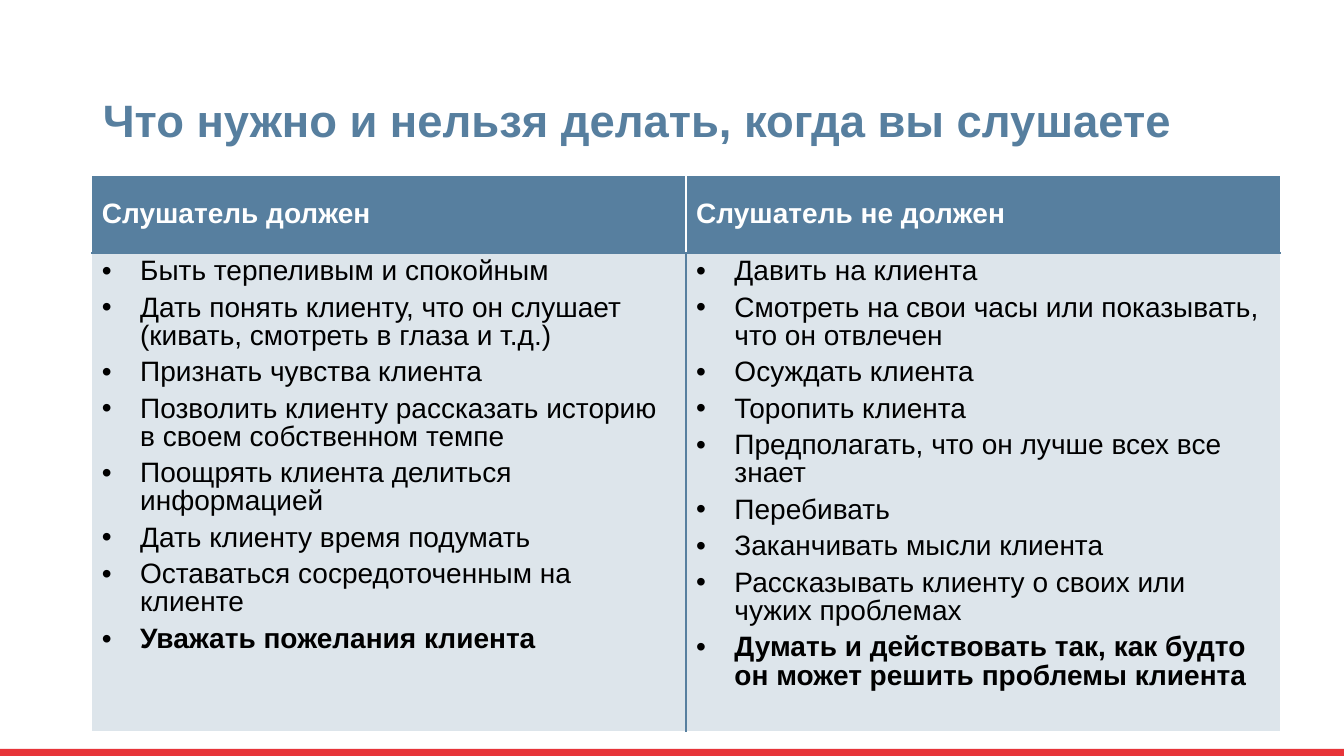
import pptx
import pptx.dml.color
import pptx.enum.shapes
import pptx.enum.text
import pptx.oxml
import pptx.oxml.ns
import pptx.util
from pptx.util import Inches

STEEL, WHITE, BLACK, RED = "577F9F", "FFFFFF", "000000", "E73439"

COLUMNS = {
    "Слушатель должен": [
        "Быть терпеливым и спокойным",
        "Дать понять клиенту, что он слушает (кивать, смотреть в глаза и т.д.)",
        "Признать чувства клиента",
        "Позволить клиенту рассказать историю в своем собственном темпе",
        "Поощрять клиента делиться информацией",
        "Дать клиенту время подумать",
        "Оставаться сосредоточенным на клиенте",
        "Уважать пожелания клиента",
    ],
    "Слушатель не должен": [
        "Давить на клиента",
        "Смотреть на свои часы или показывать, что он отвлечен",
        "Осуждать клиента",
        "Торопить клиента",
        "Предполагать, что он лучше всех все знает",
        "Перебивать",
        "Заканчивать мысли клиента",
        "Рассказывать клиенту о своих или чужих проблемах",
        "Думать и действовать так, как будто он может решить проблемы клиента",
    ],
}


def rgb(color):
    return pptx.dml.color.RGBColor.from_string(color)


def xml(markup):
    return pptx.oxml.parse_xml(markup.replace(">", f" {pptx.oxml.ns.nsdecls('a')}>", 1))


def write(paragraph, text, size=20, color=BLACK, bold=False, spacing=None, after=0, bullet=False):
    if bullet:
        properties = paragraph._p.get_or_add_pPr()
        properties.set("marL", str(Inches(0.38)))
        properties.set("indent", str(-Inches(0.38)))
        properties.append(xml('<a:buFont typeface="Arial"></a:buFont>'))
        properties.append(xml('<a:buChar char="•"></a:buChar>'))
    paragraph.alignment = pptx.enum.text.PP_ALIGN.LEFT
    paragraph.line_spacing = spacing
    paragraph.space_before = pptx.util.Pt(0)
    paragraph.space_after = pptx.util.Pt(after)
    run = paragraph.add_run()
    run.text = text
    run.font.name = "Arial"
    run.font.size = pptx.util.Pt(size)
    run.font.bold = bold
    run.font.color.rgb = rgb(color)


class ListeningSlide:
    def __init__(self, deck):
        self.slide = deck.slides.add_slide(deck.slide_layouts[5])

    def bar(self, left, top, width, height, color):
        stripe = self.slide.shapes.add_shape(
            pptx.enum.shapes.MSO_SHAPE.RECTANGLE,
            Inches(left), Inches(top), Inches(width), Inches(height))
        stripe.shadow.inherit = False
        stripe.fill.solid()
        stripe.fill.fore_color.rgb = rgb(color)
        stripe.line.fill.background()

    def title(self, text, left, top, width, height):
        heading = self.slide.shapes.title
        heading.left, heading.top = Inches(left), Inches(top)
        heading.width, heading.height = Inches(width), Inches(height)
        frame = heading.text_frame
        frame.word_wrap = True
        frame.auto_size = pptx.enum.text.MSO_AUTO_SIZE.NONE
        frame.vertical_anchor = pptx.enum.text.MSO_ANCHOR.BOTTOM
        write(frame.paragraphs[0], text, size=32.4, color=STEEL, bold=True, spacing=0.9)

    def style_cell(self, cell, borders, alpha=100):
        """Fill a cell and colour its left, right, top and bottom borders."""
        cell.fill.solid()
        cell.fill.fore_color.rgb = rgb(STEEL)
        properties = cell._tc.get_or_add_tcPr()
        if alpha < 100:
            tint = properties.find(".//" + pptx.oxml.ns.qn("a:srgbClr"))
            tint.append(xml(f'<a:alpha val="{alpha * 1000}"></a:alpha>'))
        for position, (side, color) in enumerate(zip("LRTB", borders)):
            properties.insert(position, xml(
                f'<a:ln{side} w="12700"><a:solidFill><a:srgbClr val="{color}"/>'
                f'</a:solidFill></a:ln{side}>'))

    def comparison(self, columns, left, top, width, row_heights):
        table = self.slide.shapes.add_table(
            2, len(columns), Inches(left), Inches(top),
            Inches(width), Inches(sum(row_heights))).table
        for row, height in zip(table.rows, row_heights):
            row.height = Inches(height)
        last = len(columns) - 1
        for index, (header, rules) in enumerate(columns.items()):
            top_cell, body = table.cell(0, index), table.cell(1, index)
            self.style_cell(top_cell, (WHITE, WHITE, WHITE, STEEL))
            top_cell.vertical_anchor = pptx.enum.text.MSO_ANCHOR.MIDDLE
            write(top_cell.text_frame.paragraphs[0], header, color=WHITE, bold=True, after=2)
            self.style_cell(body, (STEEL if index else WHITE, STEEL if index < last else WHITE,
                                   STEEL, WHITE), alpha=20)
            frame = body.text_frame
            for number, rule in enumerate(rules):
                paragraph = frame.add_paragraph() if number else frame.paragraphs[0]
                write(paragraph, rule, bold=rule == rules[-1], spacing=0.9, after=6, bullet=True)


def main():
    deck = pptx.Presentation()
    deck.slide_width, deck.slide_height = Inches(13.33), Inches(7.5)
    listening = ListeningSlide(deck)
    listening.bar(0, 7.43, 13.33, 0.08, RED)
    listening.title("Что нужно и нельзя делать, когда вы слушаете", 0.92, 0.64, 11.5, 0.87)
    listening.comparison(COLUMNS, 0.91, 1.74, 11.79, (0.77, 4.75))
    deck.save("out.pptx")


if __name__ == "__main__":
    main()
